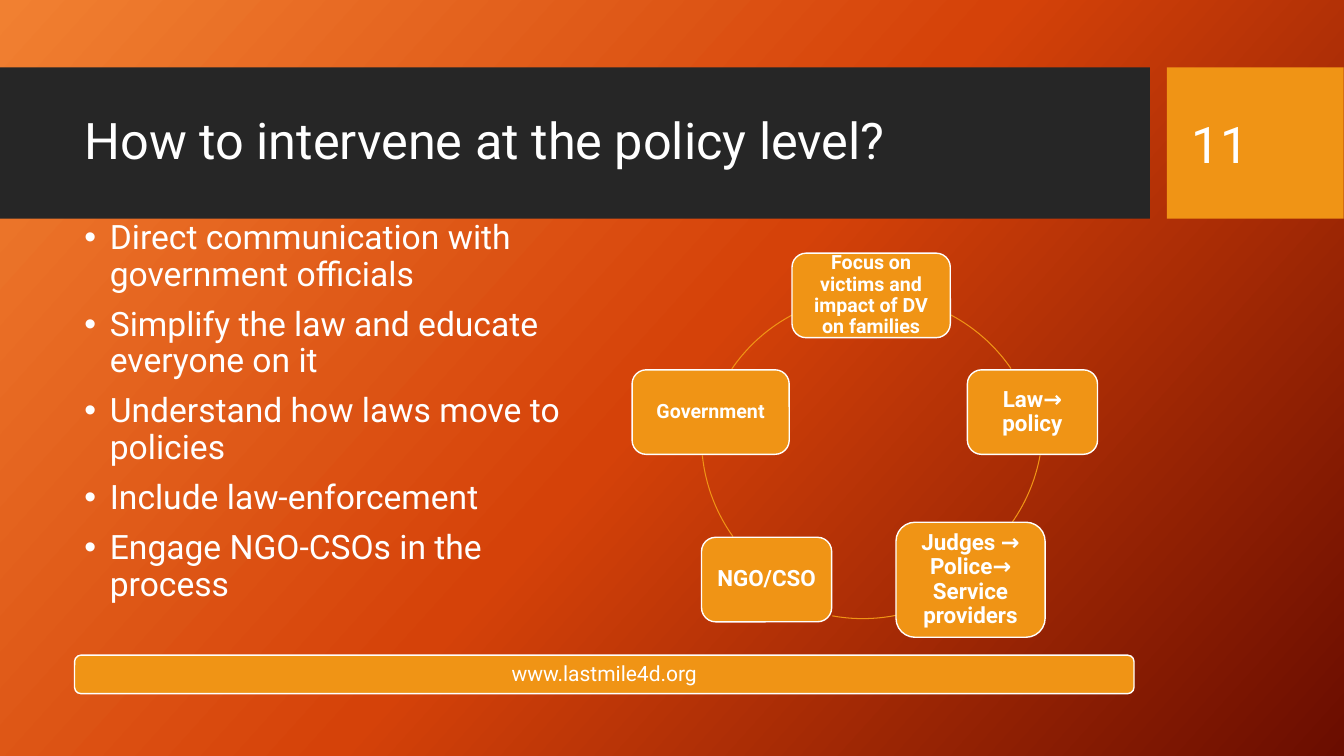
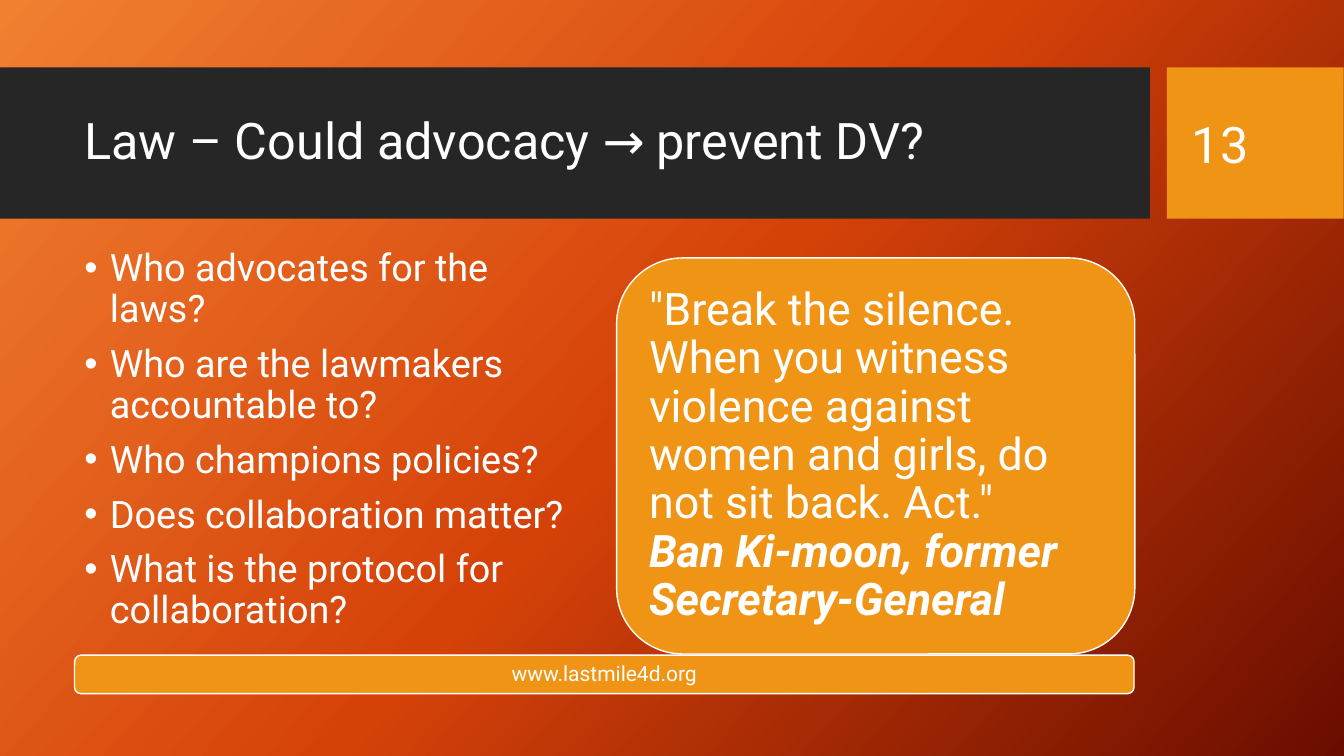
"""Build two slides on domestic violence policy and law."""
from copy import deepcopy
from lxml import etree
from pptx import Presentation
from pptx import util as u
from pptx.dml import color
from pptx.enum import shapes, text
from pptx.oxml import ns

HUES = {"white": "FFFFFF", "dark": "262626", "gold": "F09415",
        "light": "F18031", "mid": "D54209", "deep": "6A0D00"}
RECT = shapes.MSO_SHAPE.RECTANGLE
ROUND = shapes.MSO_SHAPE.ROUNDED_RECTANGLE
ARC = shapes.MSO_SHAPE.ARC
MID, TOP = text.MSO_ANCHOR.MIDDLE, text.MSO_ANCHOR.TOP
LEFT, CENTER = text.PP_ALIGN.LEFT, text.PP_ALIGN.CENTER


def rgb(name):
    return color.RGBColor.from_string(HUES[name])


def draw(page, kind, at, fill=None, line=None, width=1, runs=(), size=24,
         pad=0.25, left=None, align=LEFT, gap=0.9):
    shape = page.shapes.add_shape(kind, *map(u.Cm, at))
    shape.shadow.inherit = False
    for paint, hue in ((shape.fill, fill), (shape.line.fill, line)):
        if hue:
            paint.solid()
            paint.fore_color.rgb = rgb(hue)
        else:
            paint.background()
    if line:
        shape.line.width = u.Pt(width)
    if runs:
        frame = shape.text_frame
        look = {"word_wrap": True, "vertical_anchor": MID,
                "margin_left": u.Cm(pad if left is None else left),
                "margin_right": u.Cm(pad), "margin_top": u.Cm(pad / 2 if pad == 0.25 else pad),
                "margin_bottom": u.Cm(pad / 2 if pad == 0.25 else pad)}
        for key, val in look.items():
            setattr(frame, key, val)
        para = frame.paragraphs[0]
        para.alignment, para.line_spacing = align, gap
        for i, (words, style) in enumerate(runs):
            if i:
                para.add_line_break()
            run = para.add_run()
            run.text = words
            run.font.color.rgb = rgb("white")
            for key, val in {"name": "Roboto", "size": u.Pt(size), **style}.items():
                setattr(run.font, key, val)
    return shape


pages = [
    {"title": "How to intervene at the policy level?", "num": "11",
     "top": 5.44, "size": 24,
     "items": ["Direct communication with government officials",
               "Simplify the law and educate everyone on it",
               "Understand how laws move to policies",
               "Include law-enforcement",
               "Engage NGO-CSOs in the process"]},
    {"title": "Law – Could advocacy → prevent DV?", "num": "13",
     "top": 6.15, "size": 27,
     "items": ["Who advocates for the laws?",
               "Who are the lawmakers accountable to?",
               "Who champions policies?",
               "Does collaboration matter?",
               "What is the protocol for collaboration?"]},
]

deck = Presentation()
deck.slide_width, deck.slide_height = u.Cm(33.87), u.Cm(19.05)

for data in pages:
    page = deck.slides.add_slide(deck.slide_layouts[6])
    fill = page.background.fill
    fill.gradient()
    fill.gradient_angle = 318
    stops = page.element.find(".//" + ns.qn("a:gsLst"))
    stops.append(deepcopy(stops[-1]))
    for stop, hue, pos in zip(fill.gradient_stops, ("light", "mid", "deep"), (0, 0.5, 1)):
        stop.color.rgb = rgb(hue)
        stop.position = pos

    draw(page, RECT, (0, 1.7, 28.98, 3.81), "dark",
         runs=[(data["title"], {})], size=36, left=2.13)
    draw(page, RECT, (29.41, 1.7, 4.45, 3.81), "gold",
         runs=[(data["num"], {})], size=36, left=0.63, gap=1)
    draw(page, ROUND, (1.88, 16.51, 26.7, 0.97), "gold", "white",
         runs=[("www.lastmile4d.org", {})], size=15, pad=0.15, align=CENTER)

    body = page.shapes.add_textbox(*map(u.Cm, (1.88, data["top"], 13.06, 16.5 - data["top"])))
    frame = body.text_frame
    frame.word_wrap, frame.vertical_anchor = True, TOP
    for i, words in enumerate(data["items"]):
        para = frame.add_paragraph() if i else frame.paragraphs[0]
        props = para._p.get_or_add_pPr()
        props.set("marL", str(u.Cm(0.64)))
        props.set("indent", str(u.Cm(-0.64)))
        etree.SubElement(props, ns.qn("a:buFont")).set("typeface", "Arial")
        etree.SubElement(props, ns.qn("a:buChar")).set("char", "•")
        look = {"line_spacing": 0.9, "space_before": u.Pt(10 if i else 0)}
        for key, val in look.items():
            setattr(para, key, val)
        run = para.add_run()
        run.text = words
        run.font.color.rgb = rgb("white")
        for key, val in {"name": "Roboto", "size": u.Pt(data["size"])}.items():
            setattr(run.font, key, val)

cycle, quote = deck.slides

arcs = [(17.7, 7.44, 298, 325.5), (17.75, 6.45, 10.3, 34.8),
        (17.48, 7.06, 78.6, 100.4), (17.68, 6.78, 144.5, 174.2),
        (17.7, 7.44, 214.4, 241.9)]
for x, y, start, end in arcs:
    arc = draw(cycle, ARC, (x, y, 8.53, 8.53), line="gold", width=0.75)
    for i, deg in enumerate((start, end)):
        arc.adjustments[i] = deg * 0.6

nodes = [("Focus on victims and impact of DV on families", 14, (19.96, 6.38, 3.99, 2.13)),
         ("Law→ policy", 16, (24.38, 9.32, 3.28, 2.13)),
         ("Judges → Police→ Service providers", 16, (22.58, 13.16, 3.76, 2.9)),
         ("NGO/CSO", 16, (17.68, 13.54, 3.28, 2.13)),
         ("Government", 14, (15.93, 9.32, 3.96, 2.13))]
for words, size, at in nodes:
    draw(cycle, ROUND, at, "gold", "white", runs=[(words, {"bold": True})],
         size=size, pad=0.16, align=CENTER)

lines = [('"Break the silence. When you witness violence against women and girls, '
          'do not sit back. Act."', {}),
         ("Ban Ki-moon, former Secretary-General", {"bold": True, "italic": True})]
draw(quote, ROUND, (15.54, 6.5, 13.06, 9.98), "gold", "white",
     runs=lines, size=32, pad=0.33)

deck.save("out.pptx")
